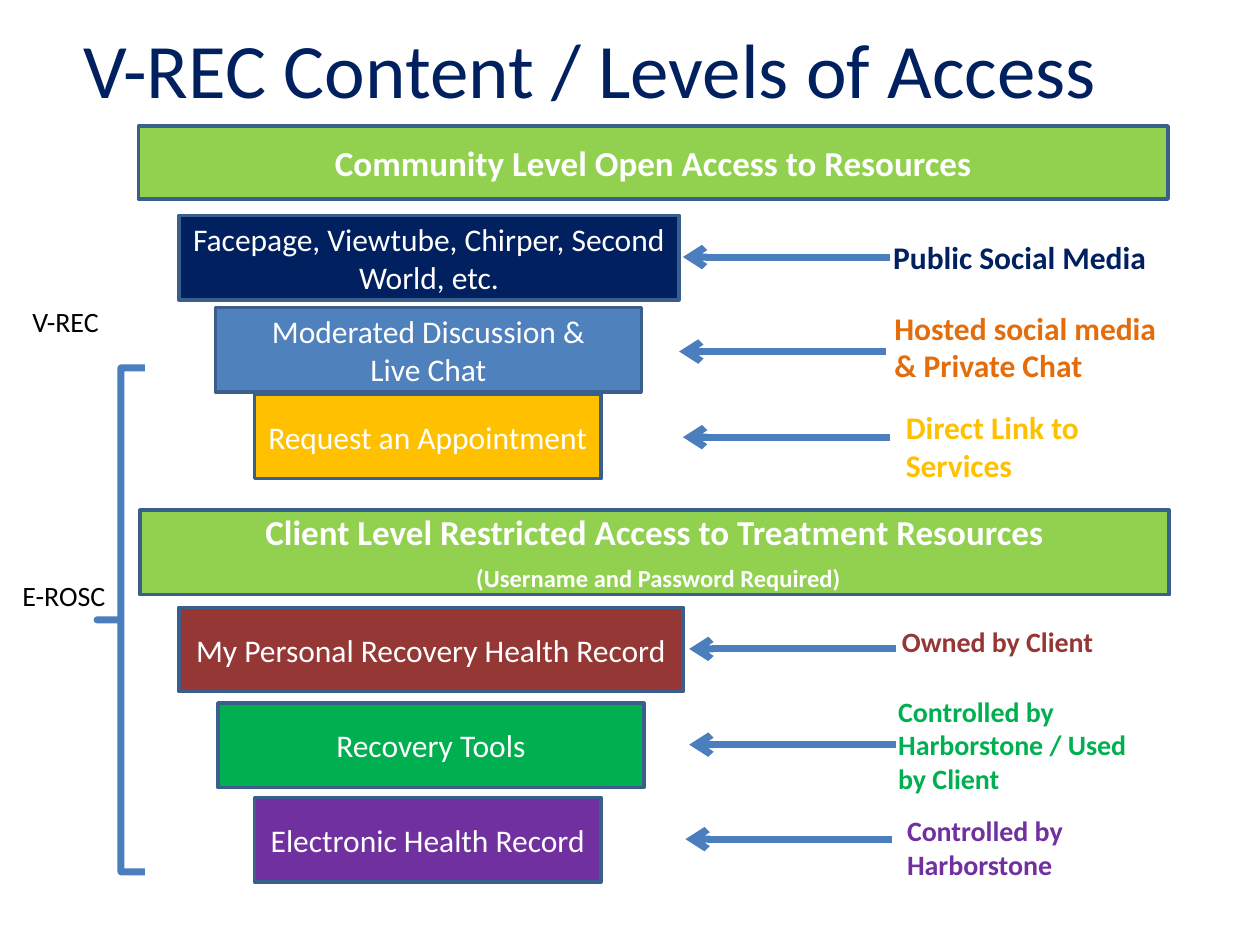
import pptx
import pptx.util
import pptx.dml.color
import pptx.enum.shapes
import pptx.enum.text
import pptx.oxml.ns
from lxml import etree

Inches, Pt = pptx.util.Inches, pptx.util.Pt
RGB = pptx.dml.color.RGBColor
SHAPE = pptx.enum.shapes.MSO_SHAPE
ALIGN = pptx.enum.text.PP_ALIGN
ANCHOR = pptx.enum.text.MSO_ANCHOR
AUTO = pptx.enum.text.MSO_AUTO_SIZE
qn = pptx.oxml.ns.qn

WHITE = RGB(0xFF, 0xFF, 0xFF)
BLACK = RGB(0, 0, 0)
NAVY = RGB(0x00, 0x20, 0x60)
LIME = RGB(0x92, 0xD0, 0x50)
BLUE = RGB(0x4F, 0x81, 0xBD)
ORANGE = RGB(0xE4, 0x6C, 0x0A)
GOLD = RGB(0xFF, 0xC0, 0x00)
MAROON = RGB(0x95, 0x37, 0x35)
GREEN = RGB(0x00, 0xB0, 0x50)
PURPLE = RGB(0x70, 0x30, 0xA0)
EDGE = RGB(0x3A, 0x5F, 0x8C)
ARROW = RGB(0x4B, 0x7E, 0xBC)

TITLE = "V-REC Content / Levels of Access"
BOX_H = 0.67
ARROW_LEN = 1.64

BANNERS = [
    ((1.1, 1, 8.17, 0.58), [[("Community Level Open Access to Resources", 20)]]),
    ((1.11, 4.05, 8.17, BOX_H), [
        [("Client Level Restricted Access to Treatment Resources", 20)],
        [(" ", 20), ("(Username and Password Required)", 14)]]),
]

BOXES = [
    (1.42, 1.71, 3.97, NAVY, ["Facepage, Viewtube, Chirper, Second World, etc."]),
    (1.71, 2.44, 3.38, BLUE, ["Moderated Discussion &", "Live Chat"]),
    (2.02, 3.13, 2.75, GOLD, ["Request an Appointment"]),
    (1.42, 4.82, 4, MAROON, ["My Personal Recovery Health Record"]),
    (1.73, 5.58, 3.38, GREEN, ["Recovery Tools"]),
    (2.02, 6.33, 2.75, PURPLE, ["Electronic Health Record"]),
]

ARROWS = [(5.42, 2.04), (5.39, 2.79), (5.42, 3.47),
          (5.47, 5.15), (5.47, 5.91), (5.44, 6.66)]

LABELS = [
    ((6.99, 1.84, 2.25, 0.4), "Public Social Media", 18, NAVY),
    ((7, 2.4, 2.42, 0.71), "Hosted social media & Private Chat", 18, ORANGE),
    ((7.09, 3.19, 2.25, 0.71), "Direct Link to Services", 18, GOLD),
    ((7.06, 4.91, 2.25, 0.37), "Owned by Client", 16, MAROON),
    ((7.03, 5.46, 2.25, 0.91), "Controlled by Harborstone / Used by Client", 16, GREEN),
    ((7.1, 6.41, 2.25, 0.64), "Controlled by Harborstone", 16, PURPLE),
]

SIDES = [
    ((0.08, 2.37, 0.88, 0.37), "V-REC", ALIGN.CENTER),
    ((0.08, 4.54, 0.88, 0.37), "E-ROSC", ALIGN.LEFT),
]


def write(tf, paragraphs, color, bold=False, align=ALIGN.LEFT):
    for i, runs in enumerate(paragraphs):
        p = tf.paragraphs[0] if i == 0 else tf.add_paragraph()
        p.alignment = align
        for text, size in runs:
            r = p.add_run()
            r.text = text
            r.font.color.rgb = color
            for name, value in {"name": "Calibri", "size": Pt(size), "bold": bold}.items():
                setattr(r.font, name, value)


def set_line(line, color, width):
    line.color.rgb = color
    line.width = Pt(width)


def add_block(s, kind, at, fill, paragraphs, bold=False):
    sp = s.shapes.add_shape(kind, *map(Inches, at))
    sp.shadow.inherit = False
    sp.fill.solid()
    sp.fill.fore_color.rgb = fill
    set_line(sp.line, EDGE, 2)
    sp.text_frame.word_wrap = True
    sp.text_frame.vertical_anchor = ANCHOR.MIDDLE
    write(sp.text_frame, paragraphs, WHITE, bold, ALIGN.CENTER)


def add_label(s, at, text, size, color, bold=False, align=ALIGN.LEFT):
    tf = s.shapes.add_textbox(*map(Inches, at)).text_frame
    tf.word_wrap = True
    tf.auto_size = AUTO.SHAPE_TO_FIT_TEXT
    write(tf, [[(text, size)]], color, bold, align)


def add_arrow(s, tip, y):
    cx = s.shapes.add_connector(
        pptx.enum.shapes.MSO_CONNECTOR.STRAIGHT,
        Inches(tip + ARROW_LEN), Inches(y), Inches(tip), Inches(y))
    set_line(cx.line, ARROW, 4)
    etree.SubElement(cx.line._get_or_add_ln(), qn("a:tailEnd"), type="arrow")
    etree.SubElement(cx._element.spPr, qn("a:effectLst"))


def main():
    prs = pptx.Presentation()
    prs.slide_width, prs.slide_height = Inches(10), Inches(7.5)
    s = prs.slides.add_slide(prs.slide_layouts[5])

    title = s.shapes.title
    place = {"left": 0.52, "top": 0, "width": 8.33, "height": 1.08}
    for name, value in place.items():
        setattr(title, name, Inches(value))
    title.text_frame.vertical_anchor = ANCHOR.MIDDLE
    write(title.text_frame, [[(TITLE, 44)]], NAVY, align=ALIGN.CENTER)

    for at, paragraphs in BANNERS:
        add_block(s, SHAPE.FLOWCHART_PROCESS, at, LIME, paragraphs, True)
    for x, y, w, fill, lines in BOXES:
        add_block(s, SHAPE.RECTANGLE, (x, y, w, BOX_H), fill, [[(t, 18)] for t in lines])
    for tip, y in ARROWS:
        add_arrow(s, tip, y)
    for at, text, size, color in LABELS:
        add_label(s, at, text, size, color, True)

    brace = s.shapes.add_shape(SHAPE.LEFT_BRACE, *map(Inches, (0.77, 2.92, 0.38, 4)))
    brace.adjustments[0], brace.adjustments[1] = 0, 0.5
    brace.shadow.inherit = False
    brace.fill.background()
    set_line(brace.line, ARROW, 4)

    for at, text, align in SIDES:
        add_label(s, at, text, 16, BLACK, align=align)

    prs.save("out.pptx")


if __name__ == "__main__":
    main()
